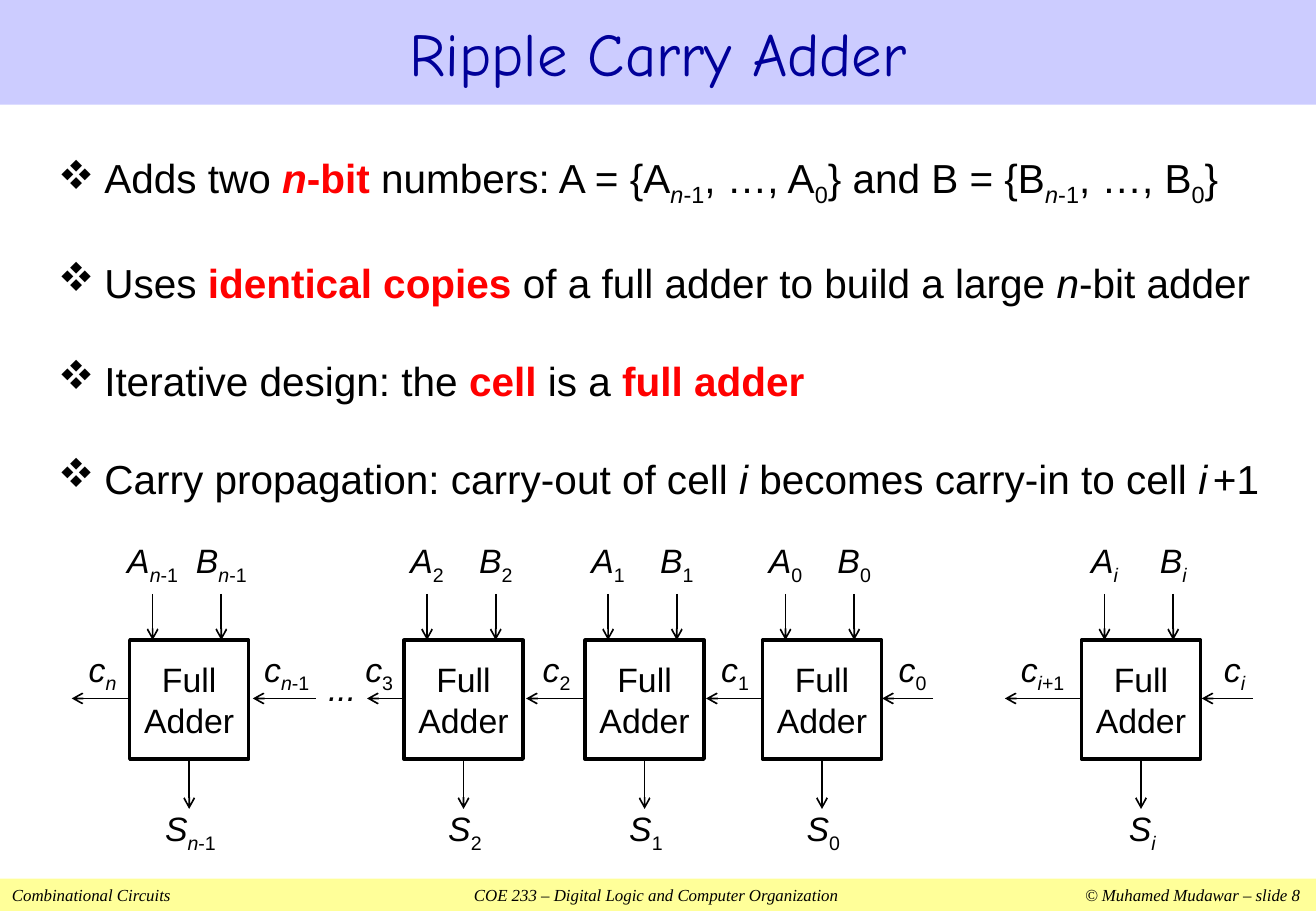
from lxml import etree
from pptx import Presentation
from pptx import util as u
from pptx.dml.color import RGBColor
from pptx.enum import shapes, text
from pptx.oxml.ns import qn

COLORS = {"band": "CCCCFF", "title": "000099", "footer": "FFFF99",
          "ink": "000000", "key": "FF0000"}
prs = Presentation()
prs.slide_width, prs.slide_height = u.Inches(10.83), u.Inches(7.5)
col, row = prs.slide_width / 100, prs.slide_height / 100
s = prs.slides.add_slide(prs.slide_layouts[6])


def add_box(x, y, w, h, fill=None, line=None):
    sp = s.shapes.add_shape(shapes.MSO_SHAPE.RECTANGLE, round(x * col), round(y * row),
                            round(w * col), round(h * row))
    sp.shadow.inherit = False
    if fill:
        sp.fill.solid()
        sp.fill.fore_color.rgb = RGBColor.from_string(COLORS[fill])
    else:
        sp.fill.background()
    if line:
        sp.line.color.rgb = RGBColor.from_string(COLORS["ink"])
        sp.line.width = u.Pt(line)
    else:
        sp.line.fill.background()
    tf = sp.text_frame
    tf.vertical_anchor = text.MSO_ANCHOR.MIDDLE
    return tf


def write(p, parts, size, font="Arial", color="ink"):
    for words, style in parts:
        r = p.add_run()
        r.text = words
        r.font.name = font
        r.font.size = u.Pt(12 if "t" in style else size)
        r.font.bold = "b" in style
        r.font.italic = "i" in style
        r.font.color.rgb = RGBColor.from_string(COLORS["key" if "b" in style else color])
        if "s" in style:
            r.font._element.set("baseline", "-25000")


tf = add_box(0, 96.45, 100, 3.55, "footer")
p = tf.paragraphs[0]
p.alignment = text.PP_ALIGN.LEFT
tabs = etree.SubElement(p._p.get_or_add_pPr(), qn("a:tabLst"))
for pos, algn in ((5.3, "ctr"), (10.6, "r")):
    etree.SubElement(tabs, qn("a:tab"), pos=str(u.Inches(pos)), algn=algn)
write(p, [("Combinational Circuits\tCOE 233 – Digital Logic and Computer Organization"
           "\t© Muhamed Mudawar – slide 8", "i")], 10, "Times New Roman")

tf = add_box(0, 0, 100, 11.5, "band")
p = tf.paragraphs[0]
p.alignment = text.PP_ALIGN.CENTER
write(p, [("Ripple Carry Adder", "")], 36, "Comic Neue", "title")

N_LESS_1 = [("n", "is"), ("-1", "s")]
bullets = [
    [("Adds two ", ""), ("n", "bi"), ("-bit ", "b"), ("numbers: A = {A", ""), *N_LESS_1,
     (", …, A", ""), ("0", "s"), ("} and B = {B", ""), *N_LESS_1,
     (", …, B", ""), ("0", "s"), ("}", "")],
    [("Uses ", ""), ("identical copies ", "b"), ("of a full adder to build a large ", ""),
     ("n", "i"), ("-bit adder", "")],
    [("Iterative design: the ", ""), ("cell", "b"), (" is a ", ""), ("full adder", "b")],
    [("Carry propagation: carry-out of cell ", ""), ("i", "i"),
     (" becomes carry-in to cell ", ""), ("i", "i"), (" ", "it"), ("+1", "")],
]
body = s.shapes.add_textbox(round(3.51 * col), round(13.07 * row),
                            round(94.83 * col), round(42 * row))
tf = body.text_frame
tf.word_wrap = True
for k, parts in enumerate(bullets):
    p = tf.add_paragraph() if k else tf.paragraphs[0]
    p.line_spacing = 1.5
    p.space_before = u.Pt(15 if k else 0)
    pPr = p._p.get_or_add_pPr()
    pPr.set("marL", str(u.Inches(0.38)))
    pPr.set("indent", str(-u.Inches(0.38)))
    etree.SubElement(pPr, qn("a:buFont"), typeface="Wingdings", charset="2")
    etree.SubElement(pPr, qn("a:buChar"), char="v")
    write(p, parts, 24)

SIDE_W, SIDE_H = 9.05, 13.07
CELL_TOP, CARRY_Y = 70.27, 76.67
cells = [(9.85, N_LESS_1), (30.7, [("2", "s")]), (44.46, [("1", "s")]),
         (57.94, [("0", "s")]), (82.18, [("i", "is")])]
carries = [
    (9.88, 5.45, 7.8, [("n", "is")]),
    (24.01, 19.21, 21.79, N_LESS_1),
    (30.75, 27.89, 28.81, [("3", "s")]),
    (44.51, 39.98, 42.29, [("2", "s")]),
    (57.99, 53.65, 55.86, [("1", "s")]),
    (70.91, 67.04, 69.34, [("0", "s")]),
    (82.18, 76.36, 79.22, [("i", "is"), ("+1", "s")]),
    (95.2, 91.32, 93.81, [("i", "is")]),
]
arrows = []
labels = [(26, 75.47, [("...", "i")])]
frames = []
for x, sub in cells:
    tf = add_box(x, CELL_TOP, SIDE_W, SIDE_H, line=2)
    frames.append((tf, [[("Full", "")], [("Adder", "")]]))
    for name, shift in (("A", 1.75), ("B", 6.97)):
        arrows.append((x + shift, 65.2, x + shift, CELL_TOP))
        labels.append((x + shift, 61.8, [(name, "i"), *sub]))
    mid = x + SIDE_W / 2
    arrows.append((mid, CELL_TOP + SIDE_H, mid, 88.8))
    labels.append((mid + 0.1, 91.2, [("S", "i"), *sub]))
for start, end, mid, sub in carries:
    arrows.append((start, CARRY_Y, end, CARRY_Y))
    labels.append((mid, 73.7, [("c", "i"), *sub]))

for x1, y1, x2, y2 in arrows:
    cn = s.shapes.add_connector(shapes.MSO_CONNECTOR.STRAIGHT, round(x1 * col),
                                round(y1 * row), round(x2 * col), round(y2 * row))
    cn.line.width = u.Pt(1)
    cn.line.color.rgb = RGBColor.from_string(COLORS["ink"])
    etree.SubElement(cn.line._get_or_add_ln(), qn("a:tailEnd"), type="arrow")
    etree.SubElement(cn._element.spPr, qn("a:effectLst"))

LABEL_W, LABEL_H = 4.62, 6.67
for x, y, parts in labels:
    sp = s.shapes.add_textbox(round((x - LABEL_W / 2) * col), round((y - LABEL_H / 2) * row),
                              round(LABEL_W * col), round(LABEL_H * row))
    frames.append((sp.text_frame, [parts]))

for tf, lines in frames:
    tf.word_wrap = False
    tf.vertical_anchor = text.MSO_ANCHOR.MIDDLE
    tf.margin_left = tf.margin_right = tf.margin_top = tf.margin_bottom = 0
    for k, parts in enumerate(lines):
        p = tf.add_paragraph() if k else tf.paragraphs[0]
        p.alignment = text.PP_ALIGN.CENTER
        write(p, parts, 20)

prs.save("out.pptx")
